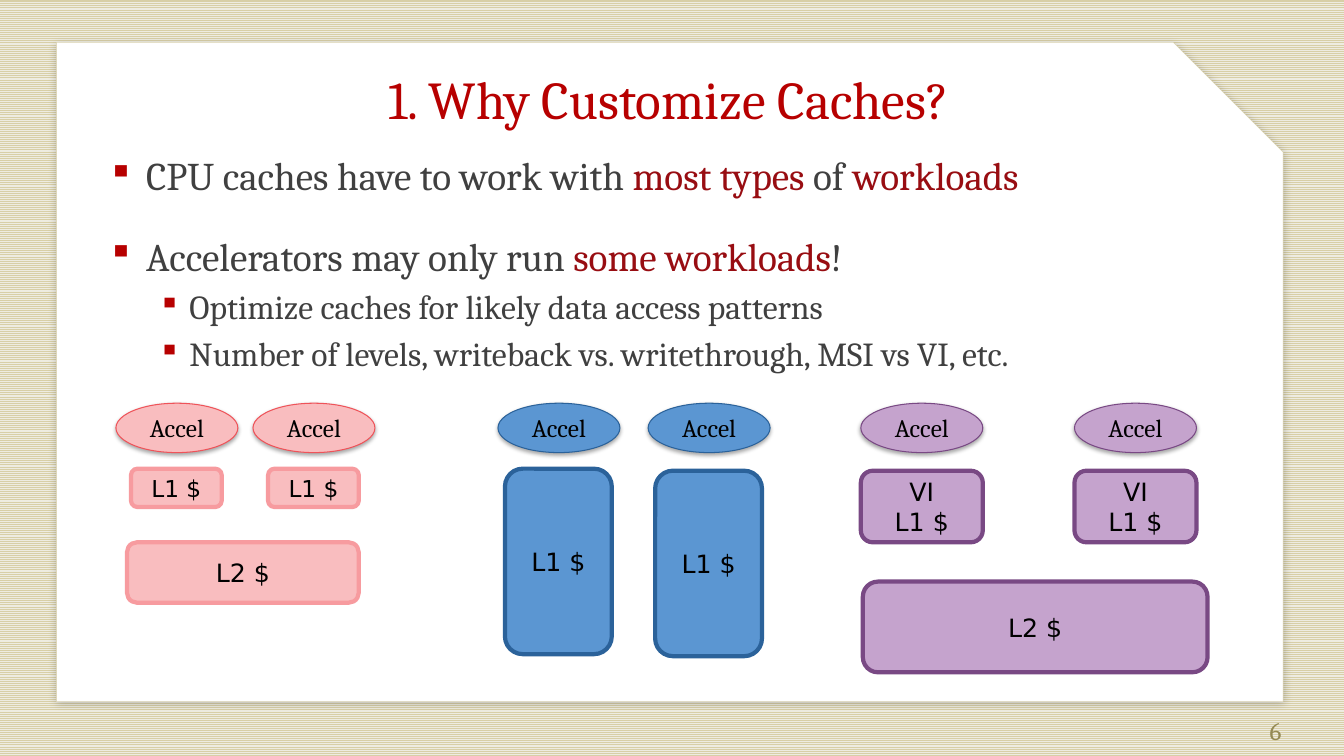
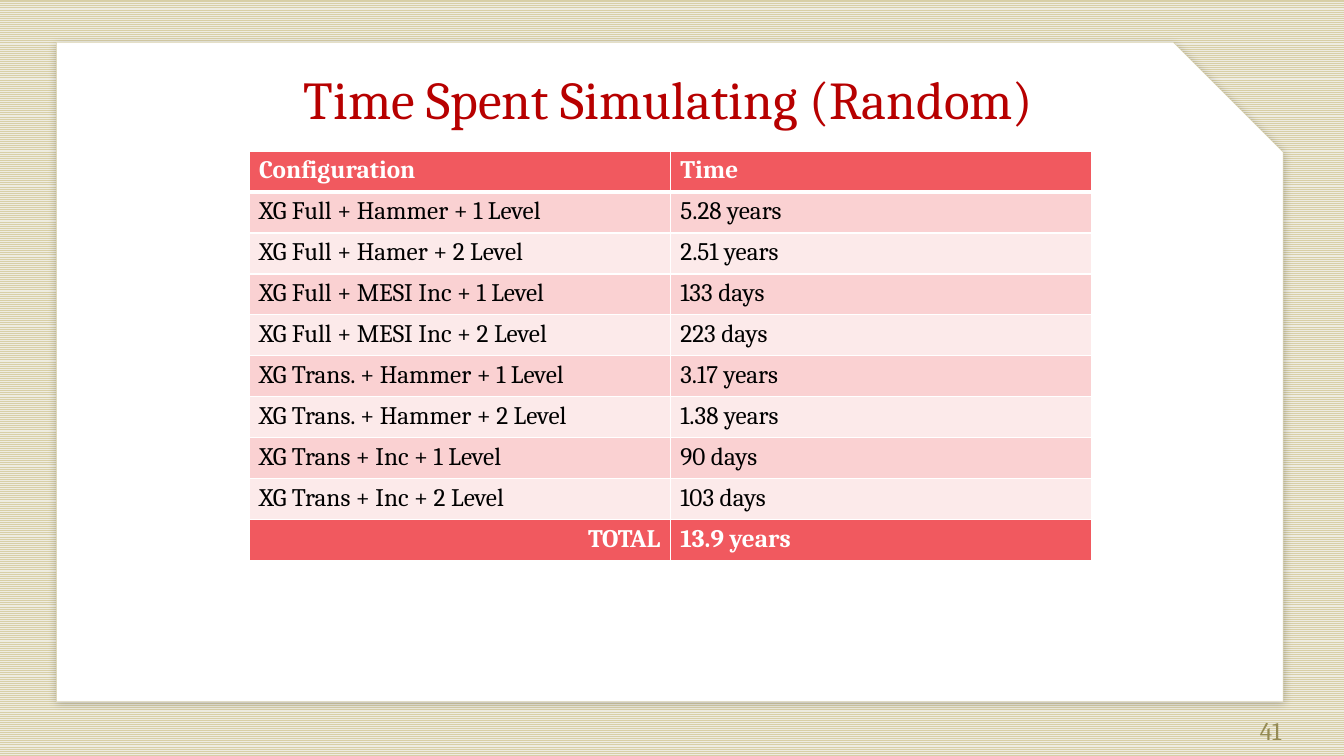
from dataclasses import dataclass
from typing import Optional

from lxml.etree import SubElement as Sub
from pptx import Presentation
from pptx.dml.color import RGBColor as RGB
from pptx.enum.dml import MSO_PATTERN as Pattern
from pptx.enum.shapes import MSO_SHAPE as Kind
from pptx.enum.text import MSO_ANCHOR as Anchor, PP_ALIGN as Align
from pptx.oxml.ns import qn
from pptx.util import Emu, Inches, Pt

# Shared look
SERIF, SANS = "Cambria", "DejaVu Sans"
WHITE, BLACK = RGB(0xFF, 0xFF, 0xFF), RGB(0, 0, 0)
CREAM, SAND, OLIVE = RGB(0xEE, 0xEC, 0xE1), RGB(0xD8, 0xCF, 0xA7), RGB(0x94, 0x8A, 0x54)
RED, WINE, GREY = RGB(0xB7, 0, 0), RGB(0x98, 0x0D, 0x12), RGB(0x40, 0x40, 0x40)
PINK, CORAL, ROSE = RGB(0xF9, 0xBD, 0xBF), RGB(0xEF, 0x53, 0x59), RGB(0xF7, 0x9B, 0x9F)
BLUE, NAVY = RGB(0x5B, 0x96, 0xD2), RGB(0x2B, 0x62, 0x9A)
LILAC, PLUM = RGB(0xC5, 0xA3, 0xCD), RGB(0x79, 0x49, 0x84)
HEAD, DARK, PALE = RGB(0xF1, 0x59, 0x5F), RGB(0xFA, 0xD1, 0xD2), RGB(0xFC, 0xEA, 0xEA)

# Grid of 160 columns by 90 rows, with square cells
COLS, ROWS = 160, 90
WIDE, HIGH = Inches(40 / 3), Inches(7.5)


@dataclass(frozen=True)
class Box:
    x: float
    y: float
    w: float
    h: float

    def place(self) -> tuple[Emu, Emu, Emu, Emu]:
        col, row = WIDE / COLS, HIGH / ROWS
        return (Emu(round(self.x * col)), Emu(round(self.y * row)),
                Emu(round(self.w * col)), Emu(round(self.h * row)))

    def shift(self, dx: float, dy: float = 0) -> "Box":
        return Box(self.x + dx, self.y + dy, self.w, self.h)


@dataclass(frozen=True)
class Shade:
    alpha: int
    blur: float
    dist: float
    angle: int


@dataclass(frozen=True)
class Paint:
    fill: RGB
    line: RGB
    width: float
    shade: Optional[Shade] = None


@dataclass(frozen=True)
class Point:
    text: str  # every second part between bars is stressed
    level: int = 0
    gap: float = 0


@dataclass(frozen=True)
class Cache:
    """Two accelerators, each with an L1, and at times a shared L2."""
    fill: RGB
    rim: RGB
    edge: RGB
    x: float
    step: float
    first: Box
    label: str = "L1 $"
    size: float = 18
    drop: float = 0
    second: Optional[Box] = None


CARD = Box(6.72, 5.04, 146.04, 78.48)
TITLE = Box(6.72, 7.2, 145.8, 8.88)
BODY = Box(12.84, 18, 133.8, 59.88)
PAGE = Box(116.4, 84.6, 37.32, 4.8)
TABLE = Box(29.64, 18, 100.32, 48.72)
CARD_SHADE = Shade(22, 6, 2, 80)
OVAL_SHADE = Shade(35, 3.1, 1.8, 90)

POINTS = [
    Point("CPU caches have to work with |most types |of| workloads"),
    Point("Accelerators may only run |some workloads|!", gap=24),
    Point("Optimize caches for likely data access patterns", 1, 4.8),
    Point("Number of levels, writeback vs. writethrough, MSI vs VI, etc.", 1, 4.8),
]
CACHES = [
    Cache(PINK, CORAL, ROSE, 13.8, 16.32, Box(15.6, 55.8, 10.8, 4.56),
          size=16.6, second=Box(15.12, 64.56, 27.6, 7.2)),
    Cache(BLUE, NAVY, NAVY, 59.28, 17.88, Box(60.12, 55.8, 12.72, 22.08), drop=0.24),
    Cache(LILAC, PLUM, PLUM, 102.48, 25.44, Box(102.48, 56.04, 14.52, 8.52),
          "VI\nL1 $", second=Box(102.72, 69.24, 41.04, 10.8)),
]
TIMES = [
    ("Configuration", "Time"),
    ("XG Full + Hammer + 1 Level", "5.28 years"),
    ("XG Full + Hamer + 2 Level", "2.51 years"),
    ("XG Full + MESI Inc + 1 Level", "133 days"),
    ("XG Full + MESI Inc + 2 Level", "223 days"),
    ("XG Trans. + Hammer + 1 Level", "3.17 years"),
    ("XG Trans. + Hammer + 2 Level", "1.38 years"),
    ("XG Trans + Inc + 1 Level", "90 days"),
    ("XG Trans + Inc + 2 Level", "103 days"),
    ("TOTAL", "13.9 years"),
]


def style(para, size: float, color: RGB, face: str = SERIF, bold: bool = False) -> None:
    font = para.font
    font.name, font.size, font.bold = face, Pt(size), bold
    font.color.rgb = color


def inset(frame, pad: float) -> None:
    frame.margin_left = frame.margin_right = Inches(pad)
    frame.margin_top = frame.margin_bottom = Inches(pad / 2)


def write(shape, text: str, size: float, color: RGB, face: str = SERIF,
          align: Align = Align.CENTER, pad: float = 0) -> None:
    frame = shape.text_frame
    frame.word_wrap = True
    frame.vertical_anchor = Anchor.MIDDLE
    inset(frame, pad)
    frame.text = text
    for para in frame.paragraphs:
        para.alignment = align
        style(para, size, color, face)


def cast(shape, shade: Shade) -> None:
    glow = Sub(shape._element.spPr.find(qn("a:effectLst")), qn("a:outerShdw"),
               blurRad=str(Pt(shade.blur)), dist=str(Pt(shade.dist)),
               dir=str(shade.angle * 60000), rotWithShape="0")
    tint = Sub(glow, qn("a:srgbClr"), val=str(BLACK))
    Sub(tint, qn("a:alpha"), val=str(shade.alpha * 1000))


def draw(slide, kind: Kind, box: Box, paint: Paint):
    shape = slide.shapes.add_shape(kind, *box.place())
    shape.shadow.inherit = False
    shape.fill.solid()
    shape.fill.fore_color.rgb = paint.fill
    shape.line.color.rgb = paint.line
    shape.line.width = Pt(paint.width)
    if paint.shade:
        cast(shape, paint.shade)
    return shape


def start(deck, title: str, page: int):
    """Add a slide with striped ground, white card, title and page number."""
    slide = deck.slides.add_slide(deck.slide_layouts[6])
    fill = slide.background.fill
    fill.patterned()
    fill.pattern = Pattern.NARROW_HORIZONTAL
    fill.fore_color.rgb, fill.back_color.rgb = CREAM, SAND
    draw(slide, Kind.SNIP_1_RECTANGLE, CARD, Paint(WHITE, SAND, 0.25, CARD_SHADE))
    write(slide.shapes.add_textbox(*TITLE.place()), title, 38, RED)
    write(slide.shapes.add_textbox(*PAGE.place()), str(page), 18, OLIVE,
          align=Align.RIGHT, pad=0.1)
    return slide


def bullet(para, level: int) -> None:
    left, hang = ((0.38, 0.38), (0.81, 0.31))[level]
    para.level = level
    props = para._p.get_or_add_pPr()
    props.set("marL", str(Inches(left)))
    props.set("indent", str(-Inches(hang)))
    Sub(Sub(props, qn("a:buClr")), qn("a:srgbClr"), val=str(RED))
    Sub(props, qn("a:buSzPct"), val="90000")
    Sub(props, qn("a:buChar"), char="▪")


def outline(slide, points: list[Point]) -> None:
    frame = slide.shapes.add_textbox(*BODY.place()).text_frame
    frame.word_wrap = True
    inset(frame, 0)
    for i, point in enumerate(points):
        para = frame.add_paragraph() if i else frame.paragraphs[0]
        bullet(para, point.level)
        para.space_before = Pt(point.gap)
        style(para, 28 - 4 * point.level, GREY)
        for j, part in enumerate(point.text.split("|")):
            run = para.add_run()
            run.text = part
            if j % 2:
                run.font.color.rgb = WINE


def block(slide, box: Box, cache: Cache, text: str, size: float) -> None:
    shape = draw(slide, Kind.ROUNDED_RECTANGLE, box, Paint(cache.fill, cache.edge, 3))
    write(shape, text, size, BLACK, SANS)


def diagram(slide, cache: Cache) -> None:
    oval = Box(cache.x, 48, 14.52, 5.88)
    for i in range(2):
        dx = i * cache.step
        accel = draw(slide, Kind.OVAL, oval.shift(dx),
                     Paint(cache.fill, cache.rim, 0.75, OVAL_SHADE))
        write(accel, "Accel", 18, BLACK)
        block(slide, cache.first.shift(dx, i * cache.drop), cache, cache.label, cache.size)
    if cache.second:
        block(slide, cache.second, cache, "L2 $", 18)


def border(cell, top: float, base: float) -> None:
    props = cell._tc.get_or_add_tcPr()
    for side, width in zip("LRTB", (1, 1, top, base)):
        line = Sub(props, qn(f"a:ln{side}"), w=str(Pt(width)))
        Sub(Sub(line, qn("a:solidFill")), qn("a:srgbClr"), val=str(WHITE))


def chart(slide, rows: list[tuple[str, str]]) -> None:
    """Draw the table of times, with heading and total set off."""
    grid = slide.shapes.add_table(len(rows), len(rows[0]), *TABLE.place()).table
    last = len(rows) - 1
    for i, row in enumerate(rows):
        strong = i in (0, last)
        for j, text in enumerate(row):
            cell = grid.cell(i, j)
            border(cell, 3 if i == 1 else 1, 3 if i == 0 else 1)
            cell.fill.solid()
            cell.fill.fore_color.rgb = HEAD if strong else DARK if i % 2 else PALE
            cell.text = text
            para = cell.text_frame.paragraphs[0]
            para.alignment = Align.RIGHT if (i, j) == (last, 0) else Align.LEFT
            style(para, 18, WHITE if strong else BLACK, bold=strong)


def main() -> None:
    deck = Presentation()
    deck.slide_width, deck.slide_height = WIDE, HIGH

    # Cache designs
    slide = start(deck, "1. Why Customize Caches?", 6)
    outline(slide, POINTS)
    for cache in CACHES:
        diagram(slide, cache)

    # Simulation times
    chart(start(deck, "Time Spent Simulating (Random)", 41), TIMES)
    deck.save("out.pptx")


if __name__ == "__main__":
    main()
